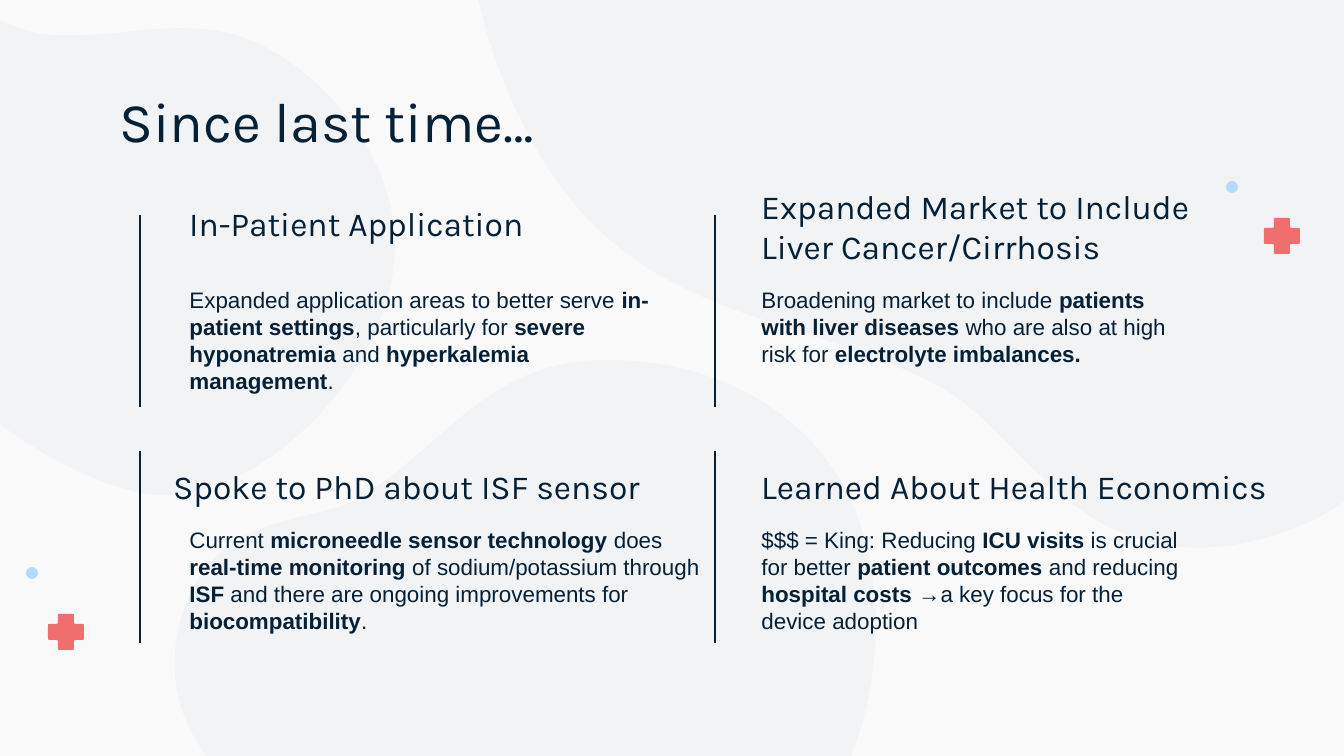
"""Build the "Since last time" slide with four progress notes."""
import lxml.etree
import pptx
import pptx.dml.color
import pptx.enum.shapes
import pptx.enum.text
import pptx.oxml.ns
import pptx.util

INK, GREY, RED, BLUE, PAPER = "062036", "BEC3C9", "F06E6E", "B4DBFF", "F9F9FA"
PX = 914400 / 134.4

TITLE = ("Since last time…", (106, 79, 1133, 83))
NOTES = [
    ("In-Patient Application", (176, 179, 586, 78),
     "Expanded application areas to better serve *in-patient settings*, particularly for "
     "*severe hyponatremia* and *hyperkalemia management*.", (176, 273, 505, 130)),
    ("Expanded Market to Include Liver Cancer/Cirrhosis", (748, 202, 505, 78),
     "Broadening market to include *patients with liver diseases* who are also at high "
     "risk for *electrolyte imbalances.*", (748, 273, 457, 130)),
    ("Spoke to PhD about ISF sensor", (160, 442, 521, 78),
     "Current *microneedle sensor technology *does *real-time monitoring *of "
     "sodium/potassium through *ISF* and there are ongoing improvements for "
     "*biocompatibility*.", (176, 513, 539, 130)),
    ("Learned About Health Economics", (748, 442, 596, 78),
     "$$$ = King: Reducing *ICU visits* is crucial for better *patient outcomes* and "
     "reducing *hospital costs* →a key focus for the device adoption", (748, 513, 457, 130)),
]
RULE_LEFTS, RULE_TOPS, RULE_LONG = (140, 715), (215, 451), 192
CROSSES, CROSS_SIZE, ARM_START, ARM_END, CUT = [(48, 614), (1264, 218)], 36, 10, 26, 2
DOTS, DOT_SIZE = [(26, 567), (1226, 181)], 12

BLOBS = [
    [(-144, 274), (-91, 356), (19, 461), (132, 491), (235, 519), (371, 398), (392, 278),
     (407, 194), (360, 112), (290, 62), (207, 3), (137, 40), (51, 35),
     (-3, 32), (-59, -31), (-137, 31), (-226, 101), (-180, 218), (-144, 274)],
    [(1461, 120), (1433, -63), (1320, -332), (1148, -472), (989, -599), (659, -495),
     (530, -302), (438, -164), (456, 13), (540, 155), (638, 321), (790, 310), (935, 384),
     (1027, 431), (1078, 586), (1261, 539), (1470, 485), (1480, 246), (1461, 120)],
    [(339, 852), (444, 895), (620, 919), (746, 872), (863, 829), (910, 624), (849, 496),
     (805, 406), (707, 359), (606, 360), (489, 360), (448, 442), (363, 496),
     (310, 528), (214, 507), (181, 618), (145, 745), (267, 824), (339, 852)],
]


def emu(*nums):
    return [round(num * PX) for num in nums]


def tint(text):
    return pptx.dml.color.RGBColor.from_string(text)


def add(parent, tag, **attrs):
    node = lxml.etree.SubElement(parent, pptx.oxml.ns.qn("a:" + tag))
    for name, value in attrs.items():
        node.set(name, str(value))
    return node


def paint(shape, color, alpha=None):
    shape.shadow.inherit = False
    shape.fill.solid()
    shape.fill.fore_color.rgb = tint(color)
    shape.line.fill.background()
    if alpha:
        node = shape.fill._xPr.find(".//" + pptx.oxml.ns.qn("a:srgbClr"))
        add(node, "alpha", val=alpha * 1000)


def outline(slide, start, moves, color, alpha=None):
    ends = [emu(*move[-1]) for move in moves]
    pen = slide.shapes.build_freeform(*emu(*start))
    pen.add_line_segments(ends, close=True)
    shape = pen.convert_to_shape()
    track = shape._element.find(".//" + pptx.oxml.ns.qn("a:path"))
    for child in list(track):
        track.remove(child)
    for order, move in enumerate([[start]] + moves):
        tag = "moveTo" if order == 0 else "lnTo" if len(move) == 1 else "cubicBezTo"
        node = add(track, tag)
        for spot in move:
            x, y = emu(*spot)
            add(node, "pt", x=x - shape.left, y=y - shape.top)
    add(track, "close")
    paint(shape, color, alpha)


def cross(left, top):
    a, b, c = ARM_START, ARM_END, CROSS_SIZE
    tips = [(a, 0), (b, 0), (b, a), (c, a), (c, b), (b, b),
            (b, c), (a, c), (a, b), (0, b), (0, a), (a, a)]
    tips = [(left + x, top + y) for x, y in tips]
    moves = []
    for order, tip in enumerate(tips):
        ends = []
        for near in (tips[order - 1], tips[(order + 1) % len(tips)]):
            gap = abs(near[0] - tip[0]) + abs(near[1] - tip[1])
            ends.append([at + CUT * (to - at) / gap for at, to in zip(tip, near)])
        moves += [[ends[0]], [tip, tip, ends[1]]]
    return moves[0][0], moves[1:]


def write(shape, text, box, size, font, anchor):
    shape._element.getparent().append(shape._element)
    shape.left, shape.top, shape.width, shape.height = emu(*box)
    frame = shape.text_frame
    frame.word_wrap = True
    frame.auto_size = pptx.enum.text.MSO_AUTO_SIZE.NONE
    frame.vertical_anchor = anchor
    frame.margin_left = frame.margin_right = pptx.util.Inches(0.1)
    frame.margin_top = frame.margin_bottom = pptx.util.Inches(0.1)
    para = frame.paragraphs[0]
    props = para._p.get_or_add_pPr()
    props.set("marL", "0")
    props.set("indent", "0")
    add(props, "buNone")
    para.alignment = pptx.enum.text.PP_ALIGN.LEFT
    para.space_before = pptx.util.Pt(0)
    para.line_spacing = 1.0
    for order, part in enumerate(text.split("*")):
        if part:
            run = para.add_run()
            run.text = part
            run.font.size = pptx.util.Pt(size)
            run.font.name = font
            run.font.bold = order % 2 == 1
            run.font.color.rgb = tint(INK)


def main():
    deck = pptx.Presentation()
    deck.slide_width, deck.slide_height = emu(1344, 756)
    slide = deck.slides.add_slide(deck.slide_layouts.get_by_name("Comparison"))
    slide.background.fill.solid()
    slide.background.fill.fore_color.rgb = tint(PAPER)
    bodies = list(slide.placeholders)[1:]
    for knots in BLOBS:
        moves = [knots[at:at + 3] for at in range(1, len(knots), 3)]
        outline(slide, knots[0], moves, GREY, 10)
    for spot in CROSSES:
        outline(slide, *cross(*spot), RED)
    for left, top in DOTS:
        dot = slide.shapes.add_shape(pptx.enum.shapes.MSO_SHAPE.OVAL,
                                     *emu(left, top, DOT_SIZE, DOT_SIZE))
        paint(dot, BLUE)

    anchors = pptx.enum.text.MSO_ANCHOR
    write(slide.shapes.title, *TITLE, 30, "Karla", anchors.MIDDLE)
    for body, (head, head_box, text, text_box) in zip(bodies, NOTES):
        label = slide.shapes.add_textbox(*emu(*head_box))
        write(label, head, head_box, 18, "Karla", anchors.BOTTOM)
        write(body, text, text_box, 12, "Arial", anchors.TOP)

    for left in RULE_LEFTS:
        for top in RULE_TOPS:
            rule = slide.shapes.add_connector(pptx.enum.shapes.MSO_CONNECTOR.STRAIGHT,
                                              *emu(left, top, left, top + RULE_LONG))
            rule.line.color.rgb = tint(INK)
            rule.line.width = pptx.util.Pt(0.75)
            add(rule._element.spPr, "effectLst")
    deck.save("out.pptx")


if __name__ == "__main__":
    main()
